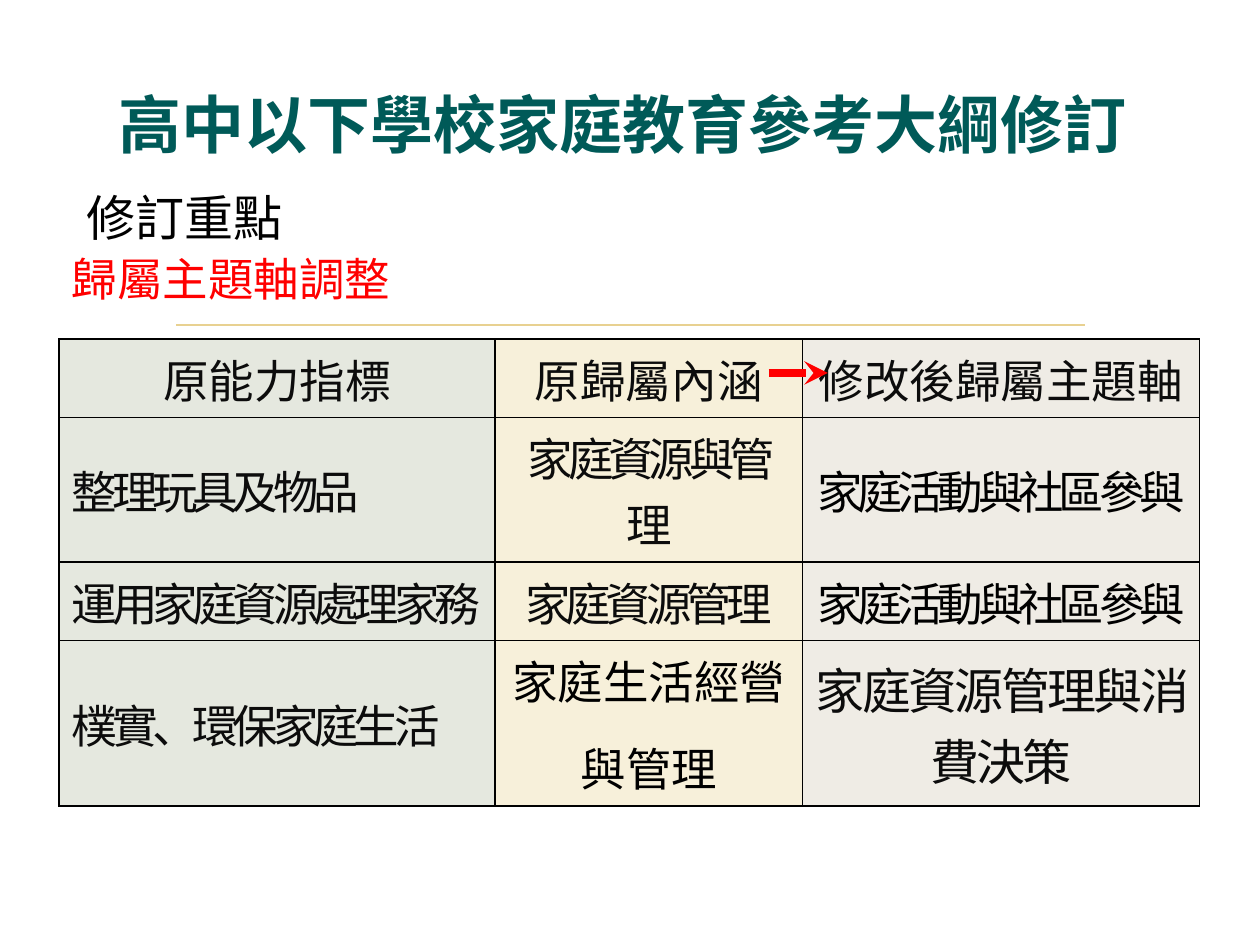
from lxml import etree
from pptx import Presentation
from pptx.dml.color import RGBColor
from pptx.enum.shapes import MSO_CONNECTOR
from pptx.enum.text import MSO_ANCHOR, MSO_AUTO_SIZE, PP_ALIGN
from pptx.oxml.ns import qn
from pptx.util import Inches, Pt

STRAIGHT = MSO_CONNECTOR.STRAIGHT
MIDDLE = MSO_ANCHOR.MIDDLE
GROW, FIXED = MSO_AUTO_SIZE.SHAPE_TO_FIT_TEXT, MSO_AUTO_SIZE.NONE
LEFT, CENTER = PP_ALIGN.LEFT, PP_ALIGN.CENTER

TEAL = RGBColor(0x00, 0x5A, 0x58)
RED = RGBColor(0xFF, 0x00, 0x00)
BLACK = RGBColor(0x00, 0x00, 0x00)
INK = RGBColor(0x0C, 0x0C, 0x0C)
SAND = RGBColor(0xE8, 0xD1, 0x91)
COLUMN_FILLS = [
    RGBColor(0xE5, 0xE8, 0xDF),
    RGBColor(0xF7, 0xF0, 0xDA),
    RGBColor(0xEF, 0xEC, 0xE5),
]

SANS = "Noto Sans CJK SC"
SERIF = "Times New Roman"
COLUMN_WIDTHS = [3.46, 2.44, 3.15]
ROW_HEIGHTS = [0.35, 0.54, 0.54, 0.54]

TIGHT = {"spacing": -3}
TIGHT_BLACK = {"spacing": -3, "color": BLACK}
INDICATORS = [
    [("原能力指標", {}), ("原歸屬內涵", {}), ("修改後歸屬主題軸", {})],
    [("整理玩具及物品", TIGHT), ("家庭資源與管理", TIGHT),
     ("家庭活動與社區參與", TIGHT_BLACK)],
    [("運用家庭資源處理家務", TIGHT), ("家庭資源管理", TIGHT),
     ("家庭活動與社區參與", TIGHT_BLACK)],
    [("樸實、環保家庭生活", TIGHT), ("家庭生活經營\n與管理", {"color": BLACK}),
     ("家庭資源管理與消費決策", {"size": 28, "spacing": -1.5})],
]


class SlideBuilder:
    def __init__(self, slide):
        self.slide = slide

    def add_words(self, paragraph, text, size=26, color=INK, font=SANS,
                  bold=False, spacing=0, align=LEFT):
        paragraph.alignment = align
        run = paragraph.add_run()
        run.text = text
        formats = {"name": font, "size": Pt(size), "bold": bold}
        for attribute, value in formats.items():
            setattr(run.font, attribute, value)
        run.font.color.rgb = color
        properties = run._r.get_or_add_rPr()
        if spacing:
            properties.set("spc", str(int(spacing * 100)))
        etree.SubElement(properties, qn("a:ea"), typeface=SANS)

    def text(self, box, text, fit=GROW, **style):
        frame = self.slide.shapes.add_textbox(*map(Inches, box)).text_frame
        formats = {"word_wrap": True, "auto_size": fit, "vertical_anchor": MIDDLE}
        for attribute, value in formats.items():
            setattr(frame, attribute, value)
        self.add_words(frame.paragraphs[0], text, **style)

    def line(self, start, end, color, width, arrow=None):
        points = map(Inches, (*start, *end))
        connector = self.slide.shapes.add_connector(STRAIGHT, *points)
        connector.line.color.rgb = color
        connector.line.width = Pt(width)
        if arrow:
            outline = connector.line._get_or_add_ln()
            etree.SubElement(outline, qn("a:tailEnd"), type=arrow)
        etree.SubElement(connector._element.spPr, qn("a:effectLst"))

    def cell(self, cell, text, fill, align, style):
        properties = cell._tc.get_or_add_tcPr()
        for side in ("a:lnL", "a:lnR", "a:lnT", "a:lnB"):
            border = etree.SubElement(properties, qn(side), w=str(int(Pt(1))))
            solid = etree.SubElement(border, qn("a:solidFill"))
            etree.SubElement(solid, qn("a:srgbClr"), val=str(BLACK))
        cell.fill.solid()
        cell.fill.fore_color.rgb = fill
        cell.vertical_anchor = MIDDLE
        frame = cell.text_frame
        for index, line in enumerate(text.split("\n")):
            paragraph = frame.add_paragraph() if index else frame.paragraphs[0]
            paragraph.space_before = Pt(6 if index else 0)
            paragraph.space_after = Pt(6)
            self.add_words(paragraph, line, align=align, **style)

    def table(self, box, rows):
        frame = self.slide.shapes.add_table(
            len(rows), len(COLUMN_WIDTHS), *map(Inches, box))
        grid = frame.table
        for column, width in zip(grid.columns, COLUMN_WIDTHS):
            column.width = Inches(width)
        for row, height in zip(grid.rows, ROW_HEIGHTS):
            row.height = Inches(height)
        frame.height = Inches(box[3])
        for r, entries in enumerate(rows):
            for c, (text, style) in enumerate(entries):
                align = LEFT if r and not c else CENTER
                self.cell(grid.cell(r, c), text, COLUMN_FILLS[c], align, style)


def main():
    deck = Presentation()
    deck.slide_width, deck.slide_height = Inches(10), Inches(7.5)
    builder = SlideBuilder(deck.slides.add_slide(deck.slide_layouts[6]))
    builder.line((1.4, 2.58), (8.61, 2.58), SAND, 1.25)
    builder.table((0.47, 2.69, 9.06, 2.74), INDICATORS)
    builder.text((0.47, 1.94, 3.85, 0.54), "歸屬主題軸調整", color=RED)
    builder.line((6.1, 2.96), (6.57, 2.96), RED, 4.5, arrow="stealth")
    builder.text((0.59, 1.44, 6.22, 0.57), "修訂重點", size=28, color=BLACK)
    builder.text((-0.12, 0.63, 10.12, 0.69), "高中以下學校家庭教育參考大綱修訂",
                 fit=FIXED, size=36, color=TEAL, font=SERIF, bold=True, align=CENTER)
    deck.save("out.pptx")


if __name__ == "__main__":
    main()
